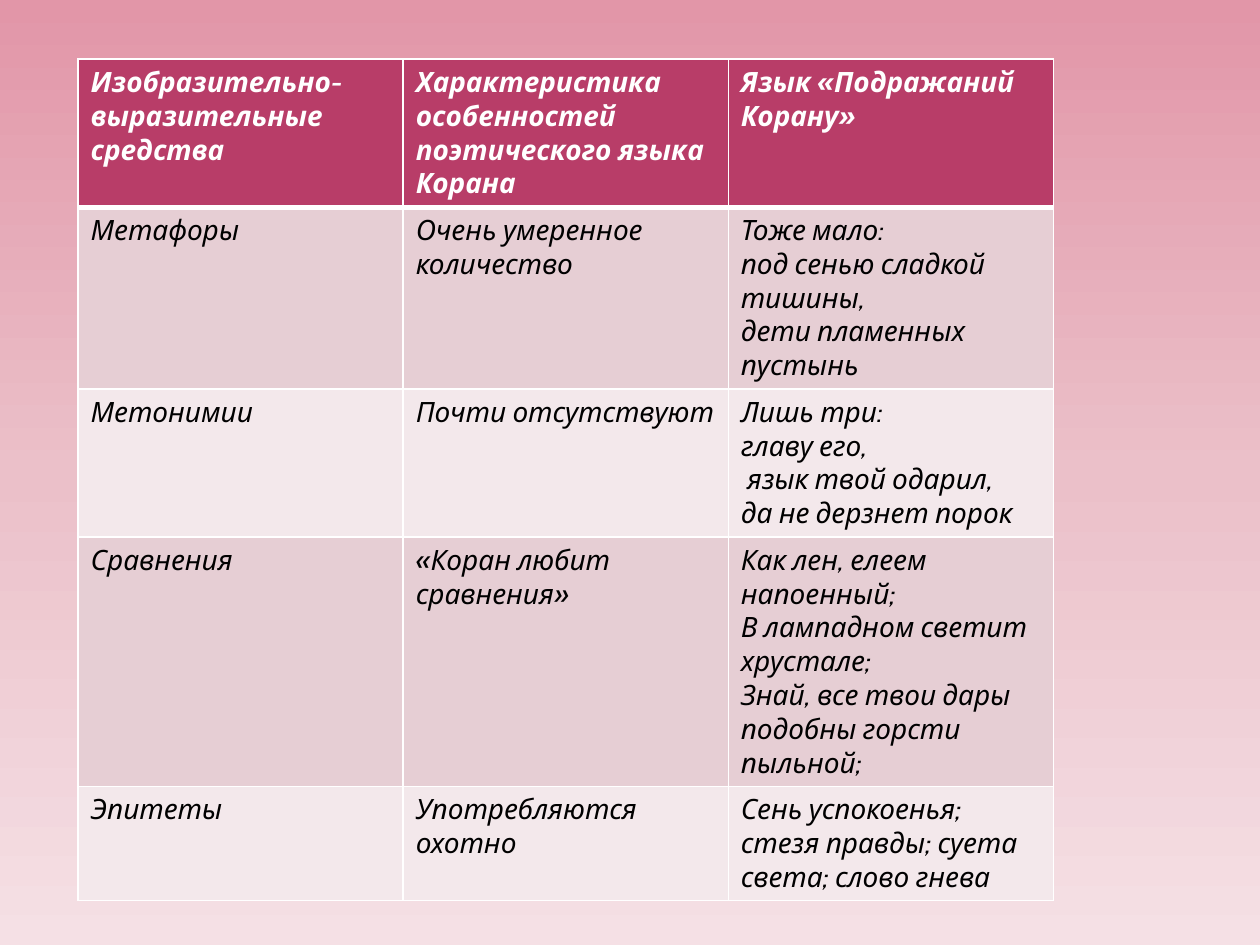
from copy import deepcopy

from lxml.etree import SubElement
from pptx import Presentation
from pptx.dml.color import RGBColor
from pptx.oxml.ns import qn
from pptx.util import Inches, Pt

HEADER = [
    "Изобразительно-выразительные средства",
    "Характеристика особенностей поэтического языка Корана",
    "Язык «Подражаний Корану»",
]
ROWS = [
    ["Метафоры", "Очень умеренное количество",
     "Тоже мало:\nпод сенью сладкой тишины,\nдети пламенных пустынь"],
    ["Метонимии", "Почти отсутствуют",
     "Лишь три:\nглаву его,\n язык твой одарил,\nда не дерзнет порок"],
    ["Сравнения", "«Коран любит сравнения»",
     "Как лен, елеем напоенный;\nВ лампадном светит хрустале;\n"
     "Знай, все твои дары подобны горсти пыльной;"],
    ["Эпитеты", "Употребляются охотно",
     "Сень успокоенья; стезя правды; суета света; слово гнева"],
]
ROW_HEIGHTS = [1.17, 1.44, 1.17, 1.97, 0.9]
LEFT, TOP, COL_WIDTH = 0.62, 0.47, 2.58

THEME = {
    "font": "Cabin",
    "size": 16,
    "header": "B83D68",
    "bands": ["E6CED4", "F3E8EB"],
    "header_text": "FFFFFF",
    "body_text": "000000",
    "border": "FFFFFF",
    "background": [(0, "E296A8"), (0.5, "EBC0C9"), (1, "F5E0E5")],
}


def paint_background(s):
    fill = s.background.fill
    fill.gradient()
    fill.gradient_angle = 270
    stops = s.element.find(".//" + qn("a:gsLst"))
    stops.insert(1, deepcopy(stops[0]))
    for stop, (position, color) in zip(fill.gradient_stops, THEME["background"]):
        stop.position = position
        stop.color.rgb = RGBColor.from_string(color)


def add_borders(cell, bottom):
    tcPr = cell._tc.get_or_add_tcPr()
    widths = {"lnL": 1, "lnR": 1, "lnT": 1, "lnB": bottom}
    for i, (tag, width) in enumerate(widths.items()):
        ln = SubElement(tcPr, qn("a:" + tag), w=str(Pt(width)))
        SubElement(SubElement(ln, qn("a:solidFill")), qn("a:srgbClr"), val=THEME["border"])
        tcPr.insert(i, ln)


def fill_cell(cell, text, row):
    is_header = row == 0
    fill = THEME["header"] if is_header else THEME["bands"][(row - 1) % 2]
    color = THEME["header_text"] if is_header else THEME["body_text"]
    cell.fill.solid()
    cell.fill.fore_color.rgb = RGBColor.from_string(fill)
    add_borders(cell, 3 if is_header else 1)
    tf = cell.text_frame
    for i, line in enumerate(text.split("\n")):
        p = tf.add_paragraph() if i else tf.paragraphs[0]
        r = p.add_run()
        r.text = line
        r.font.name = THEME["font"]
        r.font.size = Pt(THEME["size"])
        r.font.bold = is_header
        r.font.italic = True
        r.font.color.rgb = RGBColor.from_string(color)


def main():
    prs = Presentation()
    prs.slide_width, prs.slide_height = Inches(10), Inches(7.5)
    s = prs.slides.add_slide(prs.slide_layouts[6])
    paint_background(s)
    grid = [HEADER] + ROWS
    table = s.shapes.add_table(
        len(grid), len(HEADER), Inches(LEFT), Inches(TOP),
        Inches(COL_WIDTH * len(HEADER)), Inches(sum(ROW_HEIGHTS))).table
    for column in table.columns:
        column.width = Inches(COL_WIDTH)
    for row, (texts, height) in enumerate(zip(grid, ROW_HEIGHTS)):
        table.rows[row].height = Inches(height)
        for col, text in enumerate(texts):
            fill_cell(table.cell(row, col), text, row)
    prs.save("out.pptx")


if __name__ == "__main__":
    main()
